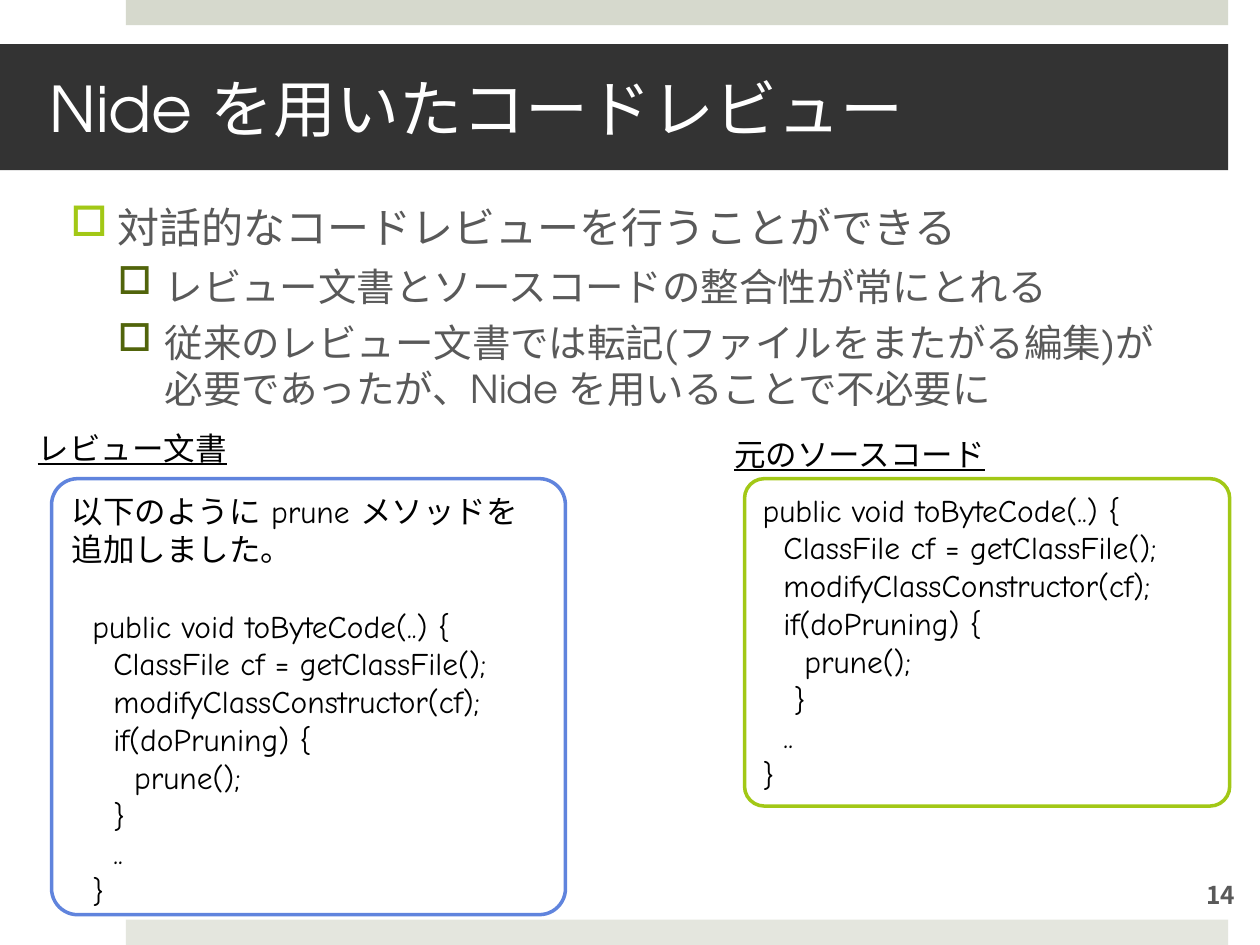
import lxml.etree
import pptx
import pptx.dml.color
import pptx.enum.shapes
import pptx.enum.text
import pptx.oxml.ns
import pptx.util

Cm, Pt = pptx.util.Cm, pptx.util.Pt
RGB = pptx.dml.color.RGBColor.from_string
SHAPE = pptx.enum.shapes.MSO_SHAPE
ALIGN = pptx.enum.text.PP_ALIGN
ANCHOR = pptx.enum.text.MSO_ANCHOR
qn = pptx.oxml.ns.qn

THEME = {
    "head": "TeX Gyre Adventor", "code": "Comic Neue", "label": "Arial", "number": "Noto Sans CJK JP",
    "white": "FFFFFF", "black": "000000", "dark": "333333", "gray": "595959",
    "top": "D6D9CD", "bottom": "E4E6DE", "blue": "6084DD", "green": "A2C816", "olive": "51640B",
    "title_pt": 36, "bullet_pt": 24, "sub_pt": 22, "text_pt": 18, "number_pt": 14,
}


def add_run(p, text, font, size, color):
    r = p.add_run()
    r.text = text
    r.font.name = THEME[font]
    r.font.size = Pt(THEME[size])
    r.font.color.rgb = RGB(THEME[color])
    ea = lxml.etree.SubElement(r.font._element, qn("a:ea"))
    ea.set("typeface", THEME[font])
    return r


def add_box(kind, box, fill, line=None):
    sp = sld.shapes.add_shape(kind, *map(Cm, box))
    sp.shadow.inherit = False
    sp.fill.solid()
    sp.fill.fore_color.rgb = RGB(THEME[fill])
    if line:
        sp.line.color.rgb = RGB(THEME[line])
        sp.line.width = Pt(2)
    else:
        sp.line.fill.background()
    sp.text_frame.word_wrap = True
    return sp


prs = pptx.Presentation()
prs.slide_width, prs.slide_height = Cm(25.4), Cm(19.05)
sld = prs.slides.add_slide(prs.slide_layouts[6])

for top, fill in [(0, "top"), (18.54, "bottom")]:
    add_box(SHAPE.RECTANGLE, (2.54, top, 22.22, 0.51), fill)

tf = sld.shapes.add_textbox(Cm(1.17), Cm(3.94), Cm(23.06), Cm(13.46)).text_frame
tf.word_wrap = True
bullets = [
    (0, "対話的なコードレビューを行うことができる"),
    (1, "レビュー文書とソースコードの整合性が常にとれる"),
    (1, "従来のレビュー文書では転記(ファイルをまたがる編集)が必要であったが、Nide を用いることで不必要に"),
]
for i, (level, text) in enumerate(bullets):
    p = tf.paragraphs[0] if i == 0 else tf.add_paragraph()
    p.level = level
    p.space_before = Pt((20, 6)[level])
    pPr = p._p.get_or_add_pPr()
    pPr.set("marL", str(Cm(0.95 * (level + 1))))
    pPr.set("indent", str(-Cm(0.95)))
    clr = lxml.etree.SubElement(pPr, qn("a:buClr"))
    lxml.etree.SubElement(clr, qn("a:srgbClr")).set("val", THEME[("green", "olive")[level]])
    lxml.etree.SubElement(pPr, qn("a:buChar")).set("char", "□")
    add_run(p, text, "head", ("bullet_pt", "sub_pt")[level], "gray")

sp = add_box(SHAPE.RECTANGLE, (0, 0.89, 24.76, 2.54), "dark")
tf = sp.text_frame
tf.margin_left, tf.margin_right = Cm(1), Cm(0.76)
tf.vertical_anchor = ANCHOR.MIDDLE
p = tf.paragraphs[0]
p.alignment = ALIGN.LEFT
add_run(p, "Nide を用いたコードレビュー", "head", "title_pt", "white")

tf = sld.shapes.add_textbox(Cm(23.57), Cm(17.12), Cm(2.08), Cm(1.85)).text_frame
tf.word_wrap = True
tf.vertical_anchor = ANCHOR.MIDDLE
p = tf.paragraphs[0]
p.alignment = ALIGN.CENTER
add_run(p, "14", "number", "number_pt", "gray").font.bold = True

review = [
    (0, 0, "以下のように prune メソッドを追加しました。"),
    (2, 22, "public void toByteCode(..) {"),
    (4, 0, "ClassFile cf = getClassFile();"),
    (4, 0, "modifyClassConstructor(cf);"),
    (4, 0, "if(doPruning) {"),
    (6, 0, "prune();"),
    (4, 0, "}"),
    (4, 0, ".."),
    (2, 0, "}"),
]
source = [
    (0, 0, "public void toByteCode(..) {"),
    (2, 0, "ClassFile cf = getClassFile();"),
    (2, 0, "modifyClassConstructor(cf);"),
    (2, 0, "if(doPruning) {"),
    (4, 0, "prune();"),
    (3, 0, "}"),
    (2, 0, ".."),
    (0, 0, "}"),
]
panels = [
    ((1.04, 9.65, 10.36, 8.79), "blue", review, "レビュー文書", (0.51, 8.53, 4.37, 1.02)),
    ((15.01, 9.65, 9.78, 6.6), "green", source, "元のソースコード", (14.55, 8.64, 5.64, 1.02)),
]
for box, line, rows, label, label_box in panels:
    sp = add_box(SHAPE.ROUNDED_RECTANGLE, box, "white", line)
    sp.adjustments[0] = 0.06
    tf = sp.text_frame
    tf.vertical_anchor = ANCHOR.TOP
    for i, (indent, gap, text) in enumerate(rows):
        p = tf.paragraphs[0] if i == 0 else tf.add_paragraph()
        p.alignment = ALIGN.LEFT
        p.space_before = Pt(gap)
        p._p.get_or_add_pPr().set("marL", str(Cm(0.21 * indent)))
        add_run(p, text, "code", "text_pt", "black")

    tf = sld.shapes.add_textbox(*map(Cm, label_box)).text_frame
    tf.word_wrap = False
    tf.auto_size = pptx.enum.text.MSO_AUTO_SIZE.SHAPE_TO_FIT_TEXT
    add_run(tf.paragraphs[0], label, "label", "text_pt", "black").font.underline = True

prs.save("out.pptx")
